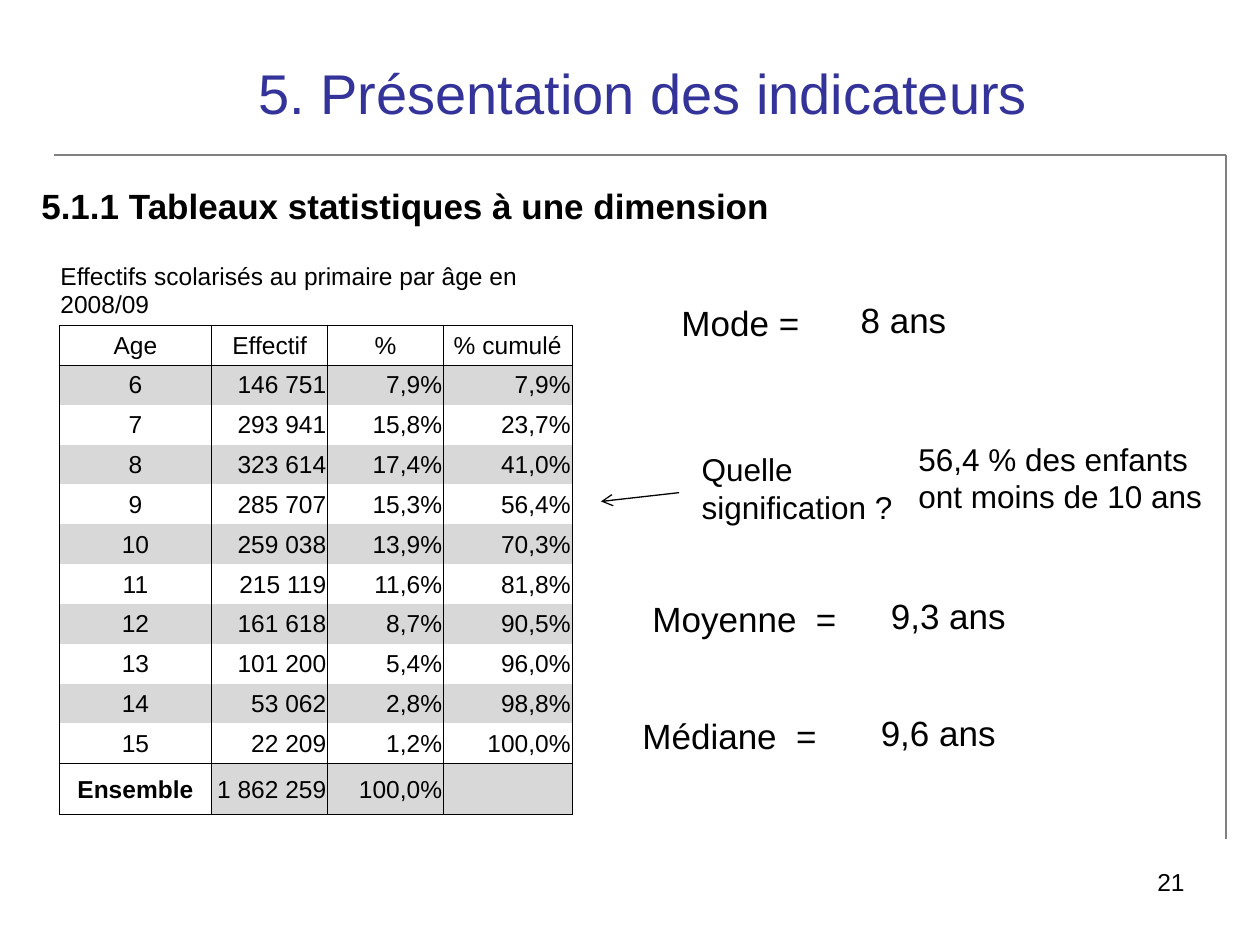
from typing import NamedTuple

from lxml.etree import SubElement
from pptx import Presentation
from pptx.dml.color import RGBColor
from pptx.enum.shapes import MSO_CONNECTOR as Connector
from pptx.enum.text import MSO_ANCHOR as Anchor, PP_ALIGN as Align
from pptx.oxml.ns import qn
from pptx.util import Inches, Length, Pt

BLACK = RGBColor(0x00, 0x00, 0x00)
GREY = RGBColor(0x80, 0x80, 0x80)
BAND = RGBColor(0xD8, 0xD8, 0xD8)
INDIGO = RGBColor(0x33, 0x33, 0x99)
FONT = "Arial"


def grid(units: float) -> Length:
    """Length of grid units: the slide is 100 columns by 75 rows."""
    return Inches(units / 10)


class Label(NamedTuple):
    text: str
    column: float
    row: float
    width: float
    height: float
    size: int = 20
    color: RGBColor = BLACK
    bold: bool = False
    align: Align = Align.LEFT
    anchor: Anchor = Anchor.TOP
    spacing: float = 1.0
    left_inset: float = 1.0
    top_inset: float = 0.5


class Line(NamedTuple):
    start: tuple[float, float]
    end: tuple[float, float]
    color: RGBColor
    weight: float
    arrow: bool = False


class Statistic(NamedTuple):
    name: str
    value: str
    column: float
    row: float
    name_width: float
    value_column: float


RULES = [
    Line((97.3, 12.3), (97.3, 66.6), GREY, 1.25),
    Line((4.3, 12.3), (97.3, 12.3), GREY, 1.25),
]
ARROW = Line((53.9, 39.1), (47.7, 39.8), BLACK, 0.75, arrow=True)

LABELS = [
    Label("5. Présentation des indicateurs", 6.7, 1.8, 81.1, 11, size=32,
          color=INDIGO, anchor=Anchor.MIDDLE, left_inset=13.8),
    Label("5.1.1 Tableaux statistiques à une dimension", 2.3, 14.8, 83.7, 3.7,
          bold=True, spacing=0.8),
    Label("Quelle signification ?", 54.7, 35.2, 17.2, 7.1, size=18),
    Label("56,4 % des enfants ont moins de 10 ans", 71.9, 34.4, 25.8, 7.1, size=18),
    Label("21", 71.7, 68.3, 23.3, 5.2, size=14, align=Align.RIGHT),
]

STATISTICS = [
    Statistic("Mode =", "8 ans", 53.1, 23.4, 14.1, 66.4),
    Statistic("Moyenne  =", "9,3 ans", 50.8, 46.9, 18, 68.8),
    Statistic("Médiane  =", "9,6 ans", 50, 56.2, 18, 68),
]

TABLE_TITLE = "Effectifs scolarisés au primaire par âge en 2008/09"
TABLE_ROWS = [
    ("Age", "Effectif", "%", "% cumulé"),
    ("6", "146 751", "7,9%", "7,9%"),
    ("7", "293 941", "15,8%", "23,7%"),
    ("8", "323 614", "17,4%", "41,0%"),
    ("9", "285 707", "15,3%", "56,4%"),
    ("10", "259 038", "13,9%", "70,3%"),
    ("11", "215 119", "11,6%", "81,8%"),
    ("12", "161 618", "8,7%", "90,5%"),
    ("13", "101 200", "5,4%", "96,0%"),
    ("14", "53 062", "2,8%", "98,8%"),
    ("15", "22 209", "1,2%", "100,0%"),
    ("Ensemble", "1 862 259", "100,0%", ""),
]
COLUMN_WIDTHS = (12.1, 9.2, 9.2, 10.2)
TABLE_HEIGHT, TITLE_HEIGHT, TOTAL_HEIGHT = 44.4, 5.5, 4.1


def write_text(frame, text: str, *, size: int, color: RGBColor = BLACK,
               bold: bool = False, align: Align = Align.LEFT,
               spacing: float = 1.0) -> None:
    paragraph = frame.paragraphs[0]
    paragraph.alignment = align
    paragraph.line_spacing = spacing
    run = paragraph.add_run()
    run.text = text
    run.font.name = FONT
    run.font.size = Pt(size)
    run.font.bold = bold
    run.font.color.rgb = color


def add_label(slide, label: Label) -> None:
    box = slide.shapes.add_textbox(grid(label.column), grid(label.row),
                                   grid(label.width), grid(label.height))
    frame = box.text_frame
    frame.word_wrap = True
    frame.vertical_anchor = label.anchor
    frame.margin_left = grid(label.left_inset)
    frame.margin_top = grid(label.top_inset)
    write_text(frame, label.text, size=label.size, color=label.color,
               bold=label.bold, align=label.align, spacing=label.spacing)


def add_statistic(slide, item: Statistic) -> None:
    add_label(slide, Label(item.name, item.column, item.row, item.name_width, 4.4))
    add_label(slide, Label(item.value, item.value_column, item.row - 0.75, 14.1, 5.1,
                           left_inset=1.9, top_inset=1))


def add_line(slide, line: Line) -> None:
    connector = slide.shapes.add_connector(
        Connector.STRAIGHT, *map(grid, line.start), *map(grid, line.end))
    connector.line.color.rgb = line.color
    connector.line.width = Pt(line.weight)
    if line.arrow:
        SubElement(connector.line._get_or_add_ln(), qn("a:tailEnd"), type="arrow")
    SubElement(connector._element.spPr, qn("a:effectLst"))


def set_borders(cell, sides: str) -> None:
    """Draw the named sides (L, R, T, B) and clear the others."""
    properties = cell._tc.get_or_add_tcPr()
    for side in "LRTB":
        edge = SubElement(properties, qn(f"a:ln{side}"), w=str(Pt(0.5)))
        if side in sides:
            fill = SubElement(edge, qn("a:solidFill"))
            SubElement(fill, qn("a:srgbClr"), val=str(BLACK))
        else:
            SubElement(edge, qn("a:noFill"))


def fill_cell(cell, text: str, *, borders: str, shaded: bool = False,
              bold: bool = False, align: Align = Align.LEFT) -> None:
    cell.vertical_anchor = Anchor.MIDDLE
    cell.margin_left = cell.margin_right = cell.margin_top = Inches(0.01)
    cell.margin_bottom = 0
    set_borders(cell, borders)
    if shaded:
        cell.fill.solid()
        cell.fill.fore_color.rgb = BAND
    else:
        cell.fill.background()
    if text:
        write_text(cell.text_frame, text, size=14, bold=bold, align=align)


def add_enrolment_table(slide) -> None:
    total = len(TABLE_ROWS)
    table = slide.shapes.add_table(
        total + 1, len(COLUMN_WIDTHS), grid(4.7), grid(20.3),
        grid(sum(COLUMN_WIDTHS)), grid(TABLE_HEIGHT)).table
    table.first_row = table.horz_banding = False
    for column, width in zip(table.columns, COLUMN_WIDTHS):
        column.width = grid(width)
    body_height = (TABLE_HEIGHT - TITLE_HEIGHT - TOTAL_HEIGHT) / (total - 1)
    heights = [TITLE_HEIGHT] + [body_height] * (total - 1) + [TOTAL_HEIGHT]
    for row, height in zip(table.rows, heights):
        row.height = grid(height)

    # Title across all columns
    table.cell(0, 0).merge(table.cell(0, len(COLUMN_WIDTHS) - 1))
    for index in range(len(COLUMN_WIDTHS)):
        fill_cell(table.cell(0, index), "" if index else TABLE_TITLE, borders="B")

    # Header, ages in alternate bands, total
    for row, values in enumerate(TABLE_ROWS, start=1):
        borders = "LR" + "T" * (row in (1, 2, total)) + "B" * (row in (1, total - 1, total))
        for column, value in enumerate(values):
            shaded = column > 0 if row == total else row % 2 == 0
            centred = row == 1 or column == 0
            fill_cell(table.cell(row, column), value, borders=borders, shaded=shaded,
                      bold=row == total and column == 0,
                      align=Align.CENTER if centred else Align.RIGHT)


def main() -> None:
    presentation = Presentation()
    presentation.slide_width, presentation.slide_height = grid(100), grid(75)
    slide = presentation.slides.add_slide(presentation.slide_layouts[6])
    for line in (*RULES, ARROW):
        add_line(slide, line)
    add_enrolment_table(slide)
    for label in LABELS:
        add_label(slide, label)
    for item in STATISTICS:
        add_statistic(slide, item)
    presentation.save("out.pptx")


if __name__ == "__main__":
    main()
